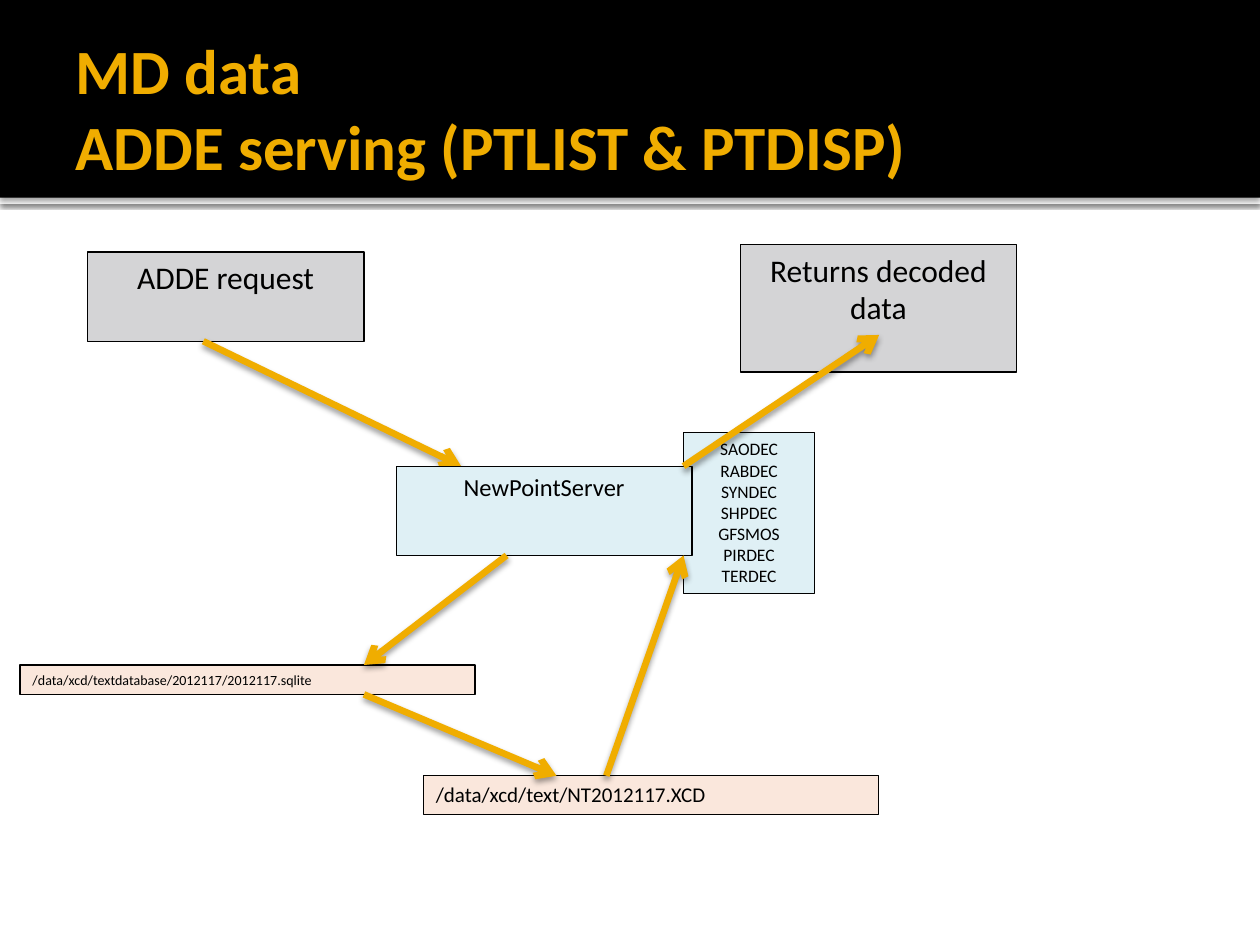
from lxml.etree import SubElement
from pptx import Presentation
from pptx.dml.color import RGBColor
from pptx.enum.shapes import MSO_CONNECTOR, MSO_SHAPE
from pptx.enum.text import MSO_ANCHOR, MSO_AUTO_SIZE, PP_ALIGN
from pptx.oxml.ns import qn
from pptx.util import Pt

FONT = "Calibri"
BLACK, WHITE, GOLD = "000000", "FFFFFF", "F0AD00"
GREY, BLUE, PEACH = "D4D4D6", "DFF0F5", "FAE7DC"
DECODERS = ["SAODEC", "RABDEC", "SYNDEC", "SHPDEC", "GFSMOS", "PIRDEC", "TERDEC"]


def color(value):
    """Turn a hex string into a colour."""
    return RGBColor.from_string(value)


def format_text(frame, size, fill, alignment, bold=False):
    """Format every paragraph and span of a text frame."""
    for para in frame.paragraphs:
        para.alignment = alignment
        for span in para.runs:
            span.font.name = FONT
            span.font.size = Pt(size)
            span.font.bold = bold
            span.font.color.rgb = color(fill)


def add_shadow(shape, blur, distance, opacity):
    """Give a shape a soft black shadow that falls straight down."""
    effects = SubElement(shape.element.spPr, qn("a:effectLst"))
    shadow = SubElement(effects, qn("a:outerShdw"), blurRad=str(Pt(blur)),
                        dist=str(Pt(distance)), dir="5400000", rotWithShape="0")
    black = SubElement(shadow, qn("a:srgbClr"), val=BLACK)
    SubElement(black, qn("a:alpha"), val=str(opacity * 1000))


def add_rectangle(page, bounds, fill):
    """Add a plain filled rectangle without an outline."""
    box = page.shapes.add_shape(MSO_SHAPE.RECTANGLE, *map(Pt, bounds))
    box.fill.solid()
    box.fill.fore_color.rgb = color(fill)
    box.line.fill.background()
    return box


def add_box(page, bounds, fill, text, size, alignment=PP_ALIGN.CENTER):
    """Add an outlined box with text at its top."""
    box = add_rectangle(page, bounds, fill)
    box.shadow.inherit = False
    box.line.color.rgb = color(BLACK)
    box.line.width = Pt(0.75)
    frame = box.text_frame
    frame.word_wrap = True
    frame.vertical_anchor = MSO_ANCHOR.TOP
    frame.text = text
    format_text(frame, size, BLACK, alignment)


def add_arrow(page, start, end):
    """Add a gold arrow with a shadow between two points."""
    arrow = page.shapes.add_connector(MSO_CONNECTOR.STRAIGHT, *map(Pt, start + end))
    arrow.line.color.rgb = color(GOLD)
    arrow.line.width = Pt(3.78)
    SubElement(arrow.element.spPr.find(qn("a:ln")), qn("a:tailEnd"), type="arrow")
    add_shadow(arrow, 3.5, 2, 38)


def add_header(page):
    """Add the black band, its white rule and the title."""
    rule = add_rectangle(page, (0, 113, 720, 3.6), WHITE)
    add_shadow(rule, 2.5, 0.8, 60)
    band = add_rectangle(page, (0, 0, 720, 113), BLACK)
    title = page.shapes.title
    band.element.addnext(title.element)
    title.left, title.top, title.width, title.height = map(Pt, (36, 12.2, 648, 98.6))
    frame = title.text_frame
    frame.text = "MD data\vADDE serving (PTLIST & PTDISP)"
    frame.word_wrap = True
    frame.auto_size = MSO_AUTO_SIZE.NONE
    frame.vertical_anchor = MSO_ANCHOR.MIDDLE
    frame.margin_left = Pt(7.2)
    frame.margin_right = frame.margin_top = frame.margin_bottom = Pt(3.6)
    format_text(frame, 36, GOLD, PP_ALIGN.LEFT, bold=True)


def main():
    """Build the deck with its serving diagram."""
    deck = Presentation()
    deck.slide_width, deck.slide_height = Pt(720), Pt(540)
    page = deck.slides.add_slide(deck.slide_layouts[5])
    add_header(page)

    add_box(page, (390.6, 247, 74.9, 92.2), BLUE, "\n".join(DECODERS), 10)
    add_box(page, (50, 144, 158, 51), GREY, "ADDE request", 18)
    add_box(page, (11.5, 380, 260, 16.8), PEACH,
            "/data/xcd/textdatabase/2012117/2012117.sqlite", 8, PP_ALIGN.LEFT)
    add_box(page, (242, 443.3, 260, 22), PEACH,
            "/data/xcd/text/NT2012117.XCD", 12, PP_ALIGN.LEFT)
    add_arrow(page, (116.2, 195), (263.5, 266.4))
    add_box(page, (226.5, 266.4, 169, 51), BLUE, "NewPointServer", 14)
    add_arrow(page, (289.5, 317.4), (208, 380))
    add_arrow(page, (208, 396.8), (318, 443.3))
    add_arrow(page, (346.5, 443.3), (390.6, 317.4))
    add_box(page, (423, 139.6, 158, 73), GREY, "Returns decoded data", 18)
    add_arrow(page, (390.6, 266.4), (502.4, 191.4))
    deck.save("out.pptx")


if __name__ == "__main__":
    main()
